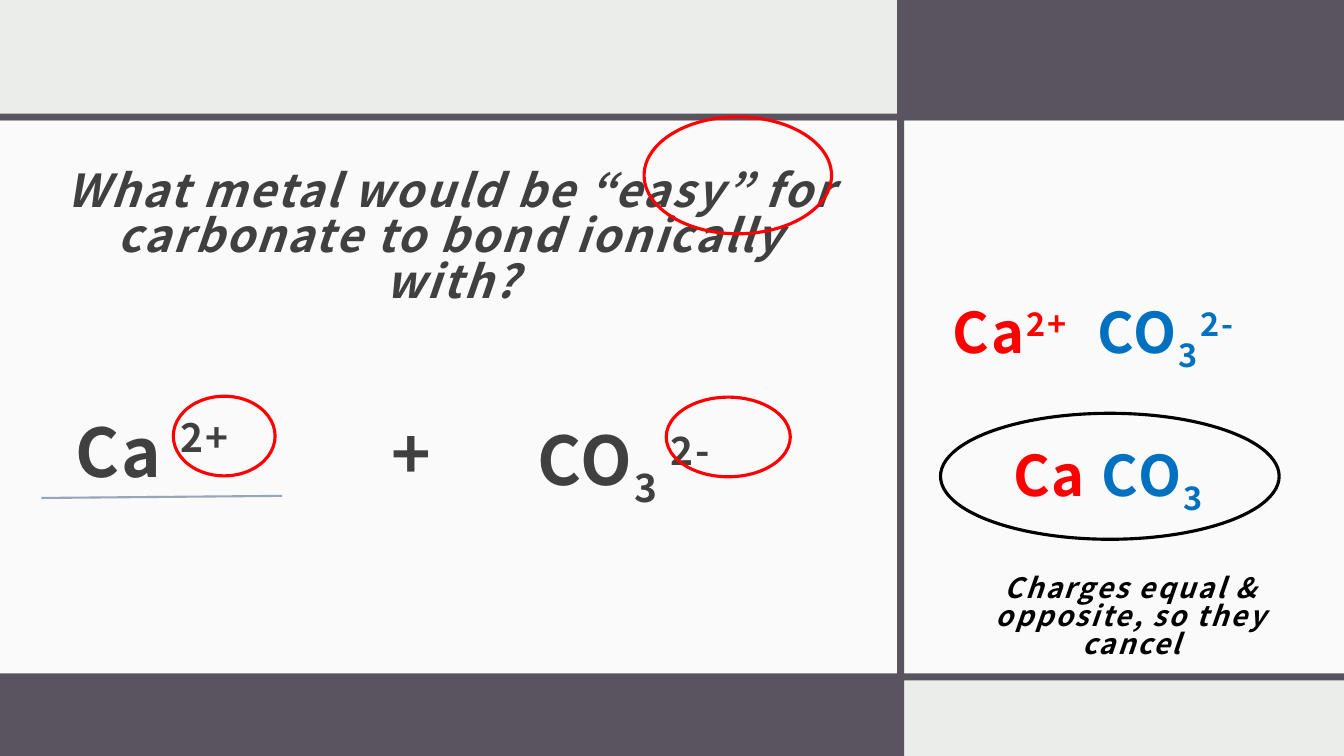
from dataclasses import dataclass

from lxml import etree
from pptx import Presentation
from pptx import util as u
from pptx.dml.color import RGBColor
from pptx.enum import shapes, text
from pptx.oxml.ns import qn


@dataclass(frozen=True)
class Theme:
    font: str = "Noto Sans CJK JP"
    backdrop: str = "EBEDEB"
    band: str = "595460"
    panel: str = "FFFFFF"
    ink: str = "404040"
    black: str = "000000"
    metal: str = "FF0000"
    carbonate: str = "0070C0"
    underline: str = "97A7B8"
    question_size: float = 32.4
    formula_size: float = 48
    answer_size: float = 40
    note_size: float = 20
    tracking: float = 1.5
    ring_width: float = 2.25
    tight: float = 0.83
    normal: float = 0.9


class Board:
    """Holds the theme and the current slide."""

    def __init__(self, slide, theme):
        self.slide, self.theme = slide, theme
        background = slide.background.fill
        background.solid()
        background.fore_color.rgb = RGBColor.from_string(theme.backdrop)

    def place(self, shape, box):
        for side, points in zip(("left", "top", "width", "height"), box):
            setattr(shape, side, u.Pt(points))

    def block(self, box, color, opacity=100):
        block = self.slide.shapes.add_shape(shapes.MSO_SHAPE.RECTANGLE, *map(u.Pt, box))
        block.shadow.inherit = False
        block.fill.solid()
        block.fill.fore_color.rgb = RGBColor.from_string(color)
        block.line.fill.background()
        if opacity < 100:
            tint = next(block.element.spPr.iter(qn("a:srgbClr")))
            etree.SubElement(tint, qn("a:alpha")).set("val", str(opacity * 1000))

    def ring(self, box, color):
        ring = self.slide.shapes.add_shape(shapes.MSO_SHAPE.OVAL, *map(u.Pt, box))
        ring.shadow.inherit = False
        ring.fill.background()
        ring.line.color.rgb = RGBColor.from_string(color)
        ring.line.width = u.Pt(self.theme.ring_width)

    def rule(self, start, end, color):
        rule = self.slide.shapes.add_connector(
            shapes.MSO_CONNECTOR.STRAIGHT, *map(u.Pt, start + end))
        rule.line.color.rgb = RGBColor.from_string(color)
        rule.line.width = u.Pt(1.5)
        etree.SubElement(rule.element.spPr, qn("a:effectLst"))

    def label(self, box, runs, size, **style):
        self.set_text(self.slide.shapes.add_textbox(*map(u.Pt, box)), runs, size, **style)

    def placeholder(self, index, box, runs, size, **style):
        holder = self.slide.placeholders[index]
        self.slide.shapes.element.append(holder.element)  # bring in front of the panels
        self.place(holder, box)
        self.set_text(holder, runs, size, **style)

    def set_text(self, shape, runs, size, align=text.PP_ALIGN.LEFT, spacing=None,
                 anchor=text.MSO_ANCHOR.TOP, before=9.3, italic=False):
        frame_format = {
            "word_wrap": True, "auto_size": text.MSO_AUTO_SIZE.NONE,
            "vertical_anchor": anchor, "margin_left": u.Pt(8.64),
            "margin_top": u.Pt(8.64), "margin_right": u.Pt(8.64),
            "margin_bottom": u.Pt(7.2)}
        paragraph_format = {
            "alignment": align, "line_spacing": spacing or self.theme.normal,
            "space_before": u.Pt(before)}
        font_format = {
            "name": self.theme.font, "size": u.Pt(size), "bold": True, "italic": italic}
        frame = shape.text_frame
        for name, value in frame_format.items():
            setattr(frame, name, value)
        paragraph = frame.paragraphs[0]
        for name, value in paragraph_format.items():
            setattr(paragraph, name, value)
        # No bullet and no hanging indent
        properties = paragraph._p.get_or_add_pPr()
        for name in ("marL", "indent"):
            properties.set(name, "0")
        etree.SubElement(properties, qn("a:buNone"))

        # Each run: words, colour, baseline shift in percent, letter spacing
        for words, color, shift, *tracking in runs:
            run = paragraph.add_run()
            run.text = words
            for name, value in font_format.items():
                setattr(run.font, name, value)
            run.font.color.rgb = RGBColor.from_string(color)
            spread = tracking[0] if tracking else self.theme.tracking
            marks = run._r.get_or_add_rPr()
            marks.set("spc", str(int(spread * 100)))
            if shift:
                marks.set("baseline", str(shift * 1000))


def main():
    deck = Presentation()
    deck.slide_width, deck.slide_height = u.Pt(960), u.Pt(540)
    theme = Theme()
    board = Board(deck.slides.add_slide(deck.slide_layouts[1]), theme)
    ink, red, blue = theme.ink, theme.metal, theme.carbonate
    sub, sup = -25, 30
    centre = text.PP_ALIGN.CENTER

    # Upper bands and the pale panel
    board.block((643.7, 0, 316.3, 83.5), theme.band)
    board.block((0, 81.2, 960, 5), theme.band)
    board.block((0, 86.2, 960, 395.3), theme.panel, opacity=75)

    # Question and carbonate ion
    board.placeholder(
        0, (29.5, 125.3, 586.1, 90),
        [("What metal would be “easy” for carbonate to bond ionically with?", ink, 0)],
        theme.question_size, align=centre, spacing=theme.tight,
        anchor=text.MSO_ANCHOR.MIDDLE, before=0, italic=True)
    board.placeholder(
        1, (375.1, 290.9, 177.1, 108),
        [("CO", ink, 0), ("3 ", ink, sub), ("2-", ink, sup)], theme.formula_size)

    # Lower bands and the divider
    board.block((0, 483.8, 641.5, 56.2), theme.band)
    board.block((0, 481, 960, 5), theme.band)
    board.block((640.8, 0, 5, 540), theme.band)

    # Calcium ion, plus sign and underline
    board.label((45.4, 290.9, 177.1, 108), [("Ca", ink, 0)], theme.formula_size)
    board.label((270.7, 292.3, 95.8, 108), [("+", ink, 0)], theme.formula_size)
    board.rule((29.5, 355.7), (201.6, 354.2), theme.underline)

    # Rings around the clue and both charges
    for box in ((460.1, 83.5, 133.9, 83.5),
                (123.8, 283, 72.7, 56.9),
                (475.9, 283.7, 88.6, 56.9)):
        board.ring(box, red)
    board.label((108, 287.3, 177.1, 108),
                [(" ", ink, 0), ("2+", ink, sup)], theme.formula_size)

    # Worked answer on the right
    board.label((671.8, 204.5, 306, 79.2),
                [("Ca", red, 0), ("2+", red, sup), (" ", red, 0, 11),
                 ("CO", blue, 0), ("3", blue, sub), ("2-", blue, sup)],
                theme.answer_size)
    board.label((715, 306.7, 198.7, 79.2),
                [("Ca ", red, 0), ("CO", blue, 0), ("3", blue, sub)],
                theme.answer_size)
    board.label((675.4, 403.2, 265.7, 79.2),
                [("Charges equal & opposite, so they cancel", theme.black, 0)],
                theme.note_size, align=centre, spacing=theme.tight, italic=True)
    board.ring((671.8, 295.2, 241.9, 90), theme.black)

    deck.save("out.pptx")


if __name__ == "__main__":
    main()
